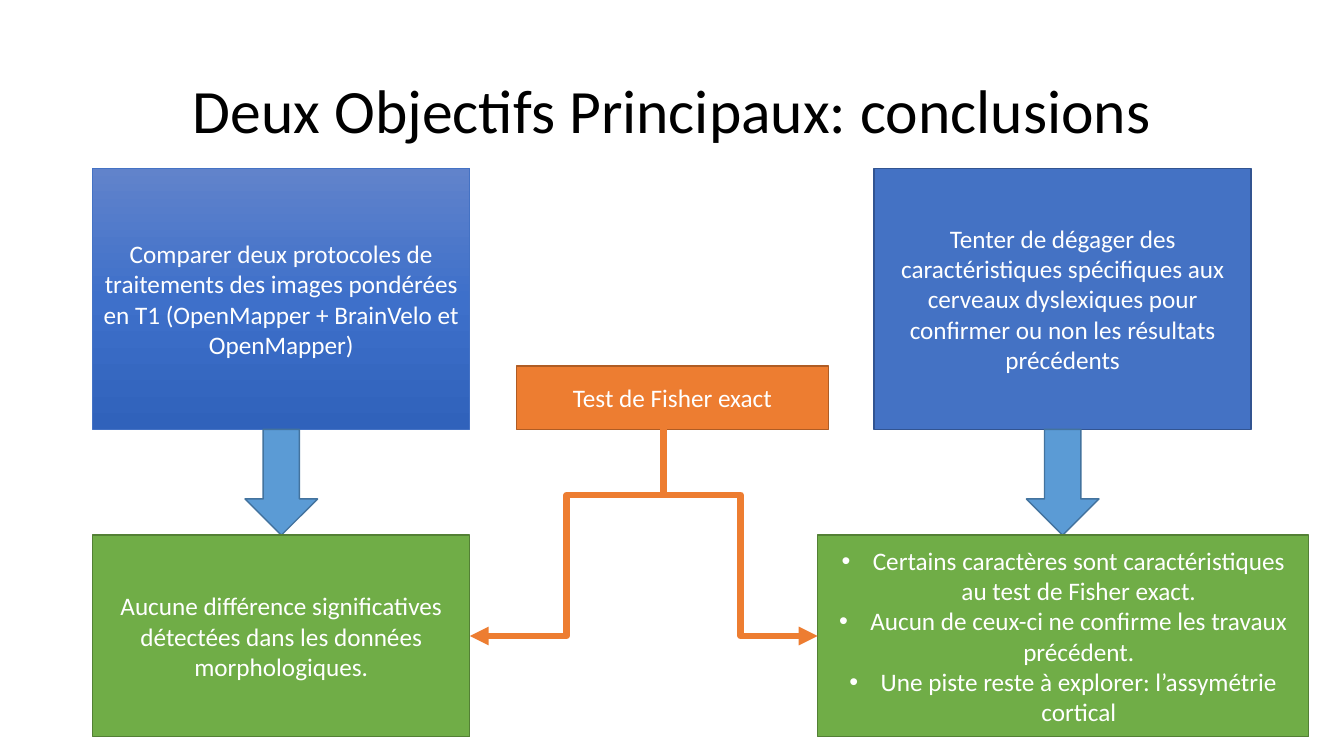
from copy import deepcopy

from lxml import etree
from pptx import Presentation
from pptx import util as u
from pptx.dml.color import RGBColor
from pptx.enum import shapes, text
from pptx.oxml import ns

BLACK = RGBColor(0x00, 0x00, 0x00)
WHITE = RGBColor(0xFF, 0xFF, 0xFF)
BLUE = RGBColor(0x44, 0x72, 0xC4)
NAVY = RGBColor(0x32, 0x54, 0x91)
SKY = RGBColor(0x5B, 0x9B, 0xD5)
STEEL = RGBColor(0x43, 0x73, 0x9E)
GREEN = RGBColor(0x70, 0xAD, 0x47)
MOSS = RGBColor(0x53, 0x80, 0x35)
ORANGE = RGBColor(0xED, 0x7D, 0x31)
RUST = RGBColor(0xAF, 0x5C, 0x24)
FADE = (
    RGBColor(0x61, 0x83, 0xCB),
    RGBColor(0x3E, 0x70, 0xCA),
    RGBColor(0x30, 0x62, 0xBB),
)


class Board:
    font = "Calibri"
    size = 18
    hang = 0.31

    def __init__(self, slide):
        self.slide = slide

    def label(self, shape, lines, size, color):
        frame = shape.text_frame
        frame.word_wrap = True
        frame.vertical_anchor = text.MSO_ANCHOR.MIDDLE
        frame.text = "\n".join(lines)
        for para in frame.paragraphs:
            para.alignment = text.PP_ALIGN.CENTER
            for run in para.runs:
                run.font.name = self.font
                run.font.size = u.Pt(size)
                run.font.color.rgb = color
        return frame.paragraphs

    def title(self, words, left, top, width, height):
        box = self.slide.shapes.add_textbox(*map(u.Inches, (left, top, width, height)))
        self.label(box, [words], 44, BLACK)[0].line_spacing = 0.9

    def shape(self, kind, left, top, width, height, fill, line, weight=1):
        item = self.slide.shapes.add_shape(
            kind, *map(u.Inches, (left, top, width, height)))
        item.shadow.inherit = False
        item.fill.solid()
        item.fill.fore_color.rgb = fill
        item.line.color.rgb = line
        item.line.width = u.Pt(weight)
        return item

    def box(self, lines, left, top, width, height, fill, line, weight=1):
        item = self.shape(shapes.MSO_SHAPE.RECTANGLE, left, top, width, height,
                          fill, line, weight)
        self.label(item, lines, self.size, WHITE)
        return item

    def shade(self, item, colors):
        item.fill.gradient()
        item.fill.gradient_angle = 270
        stops = item.element.spPr.find(".//" + ns.qn("a:gsLst"))
        stops.insert(1, deepcopy(stops[0]))
        for i, (stop, color) in enumerate(zip(item.fill.gradient_stops, colors)):
            stop.position = i / (len(colors) - 1)
            stop.color.rgb = color

    def bullets(self, item):
        for para in item.text_frame.paragraphs:
            props = para._p.get_or_add_pPr()
            props.set("marL", str(u.Inches(self.hang)))
            props.set("indent", str(-u.Inches(self.hang)))
            etree.SubElement(props, ns.qn("a:buFont")).set("typeface", "Arial")
            etree.SubElement(props, ns.qn("a:buChar")).set("char", "•")

    def link(self, kind, start, end, arrow=False):
        item = self.slide.shapes.add_connector(kind, *map(u.Inches, start + end))
        item.line.color.rgb = ORANGE
        item.line.width = u.Pt(4.5)
        props = item.element.spPr
        if arrow:
            line = props.find(ns.qn("a:ln"))
            etree.SubElement(line, ns.qn("a:tailEnd")).set("type", "triangle")
        etree.SubElement(props, ns.qn("a:effectLst"))


def main():
    deck = Presentation()
    deck.slide_width, deck.slide_height = u.Inches(13.33), u.Inches(7.5)
    board = Board(deck.slides.add_slide(deck.slide_layouts[6]))

    left, right, wide = 0.92, 8.67, 3.74
    top, tall = 1.67, 2.59
    base = top + tall
    drop = 1.05
    low = base + drop

    board.title("Deux Objectifs Principaux: conclusions", left, 0.4, 11.5, 1.45)

    # Goals
    goal = board.box(
        ["Comparer deux protocoles de traitements des images pondérées en T1 "
         "(OpenMapper + BrainVelo et OpenMapper)"],
        left, top, wide, tall, BLUE, BLUE, 0.5)
    board.shade(goal, FADE)
    board.box(
        ["Tenter de dégager des caractéristiques spécifiques aux cerveaux "
         "dyslexiques pour confirmer ou non les résultats précédents"],
        right, top, wide, tall, BLUE, NAVY)

    # Arrows centred under the goals
    thick = 0.72
    for side in (left, right):
        board.shape(shapes.MSO_SHAPE.DOWN_ARROW, side + (wide - thick) / 2, base,
                    thick, drop, SKY, STEEL)

    # Findings
    edge = 8.11
    board.box(
        ["Aucune différence significatives détectées dans les données "
         "morphologiques."],
        left, low, wide, 2, GREEN, MOSS)
    found = board.box(
        ["Certains caractères sont caractéristiques au test de Fisher exact.",
         "Aucun de ceux-ci ne confirme les travaux précédent.",
         "Une piste reste à explorer: l’assymétrie cortical"],
        edge, low, 4.87, 2, GREEN, MOSS)
    board.bullets(found)

    # Test and its branches to both findings
    high = 0.63
    board.box(["Test de Fisher exact"], 5.12, base - high, 3.1, high, ORANGE, RUST)
    fork = (6.58, 4.91)
    board.link(shapes.MSO_CONNECTOR.STRAIGHT, (fork[0], base), fork)
    for end in (left + wide, edge):
        board.link(shapes.MSO_CONNECTOR.ELBOW, fork, (end, low + 1), arrow=True)

    deck.save("out.pptx")


if __name__ == "__main__":
    main()
